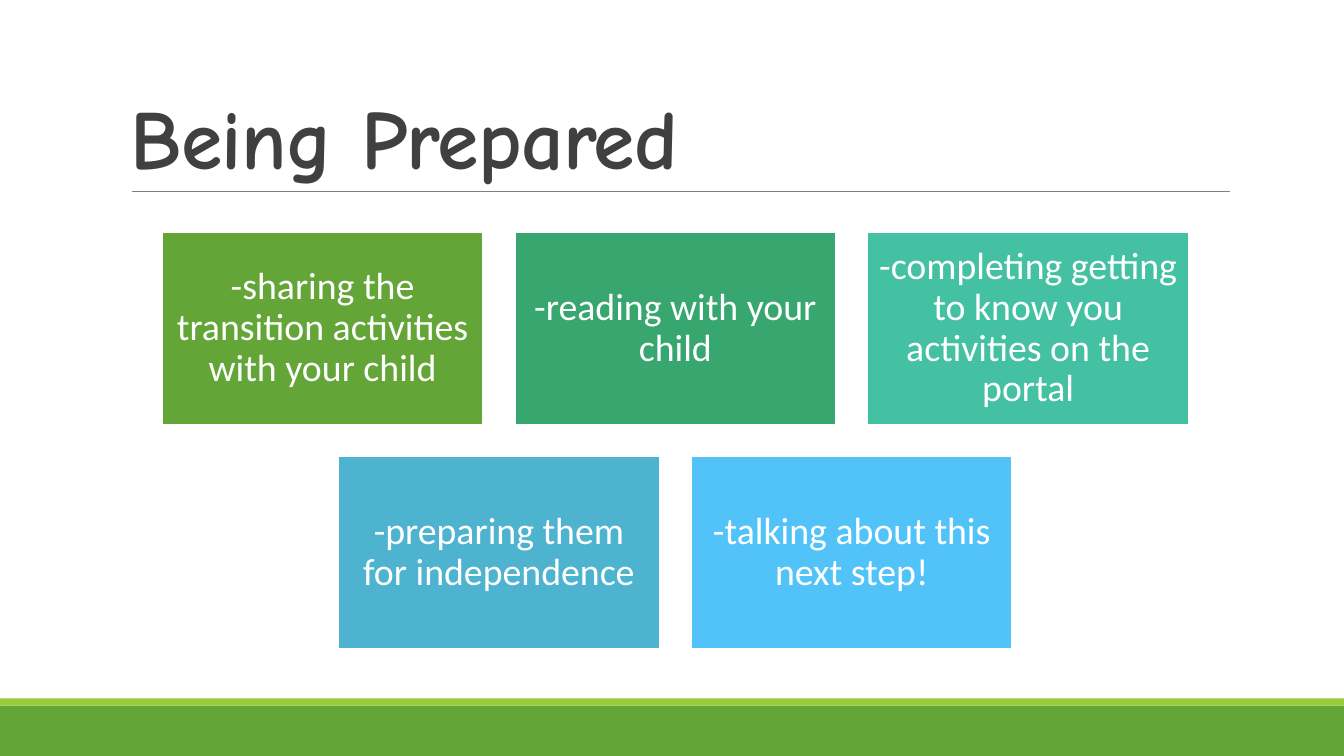
"""Build the "Being Prepared" slide: a title above two centred rows of coloured cards."""
from lxml.etree import SubElement
from pptx import Presentation
from pptx.dml.color import RGBColor
from pptx.enum.shapes import MSO_CONNECTOR, MSO_SHAPE
from pptx.enum.text import MSO_ANCHOR, PP_ALIGN
from pptx.oxml.ns import qn
from pptx.util import Cm, Pt

WHITE = RGBColor(0xFF, 0xFF, 0xFF)
DARK = RGBColor(0x40, 0x40, 0x40)
GREY = RGBColor(0x80, 0x80, 0x80)
GREEN = RGBColor(0x63, 0xA5, 0x37)
LIME = RGBColor(0x99, 0xCB, 0x38)
EMERALD = RGBColor(0x37, 0xA7, 0x6F)
TEAL = RGBColor(0x44, 0xC1, 0xA3)
BLUE = RGBColor(0x4E, 0xB3, 0xCF)
SKY = RGBColor(0x51, 0xC3, 0xF9)

TITLE = "Being Prepared"
ROWS = [
    [("-sharing the transition activities with your child", GREEN),
     ("-reading with your child", EMERALD),
     ("-completing getting to know you activities on the portal", TEAL)],
    [("-preparing them for independence", BLUE),
     ("-talking about this next step!", SKY)],
]
BANDS = [(17.78, 1.27, GREEN), (17.6, 0.18, LIME)]

SLIDE_W, SLIDE_H = 33.87, 19.05
CARD_W, CARD_H, GAP = 8.09, 4.85, 0.8
CARDS_CENTRE, CARDS_TOP = 17.02, 5.85


def write(sp, text, font="Calibri", size=27, color=WHITE, bold=False, spacing=0,
          align=PP_ALIGN.CENTER, anchor=MSO_ANCHOR.MIDDLE, leading=0.9,
          inset_x=0.28, inset_y=0.28):
    tf = sp.text_frame
    tf.word_wrap = True
    tf.vertical_anchor = anchor
    tf.margin_left = tf.margin_right = Cm(inset_x)
    tf.margin_top = tf.margin_bottom = Cm(inset_y)
    p = tf.paragraphs[0]
    p.alignment = align
    p.line_spacing = leading
    r = p.add_run()
    r.text = text
    r.font.name = font
    r.font.size = Pt(size)
    r.font.bold = bold
    r.font.color.rgb = color
    if spacing:
        r.font._element.set("spc", str(spacing))


def add_box(s, x, y, w, h, fill, line=None):
    sp = s.shapes.add_shape(MSO_SHAPE.RECTANGLE, Cm(x), Cm(y), Cm(w), Cm(h))
    sp.shadow.inherit = False
    sp.fill.solid()
    sp.fill.fore_color.rgb = fill
    if line is None:
        sp.line.fill.background()
    else:
        sp.line.color.rgb = line
        sp.line.width = Pt(1.25)
    return sp


def main():
    prs = Presentation()
    prs.slide_width, prs.slide_height = Cm(SLIDE_W), Cm(SLIDE_H)
    s = prs.slides.add_slide(prs.slide_layouts[6])

    for y, h, color in BANDS:
        add_box(s, 0, y, SLIDE_W, h, color)

    rule = s.shapes.add_connector(MSO_CONNECTOR.STRAIGHT, Cm(3.33), Cm(4.83), Cm(30.99), Cm(4.83))
    rule.line.color.rgb = GREY
    rule.line.width = Pt(0.5)
    SubElement(rule._element.spPr, qn("a:effectLst"))

    title = s.shapes.add_textbox(Cm(3.05), Cm(0.79), Cm(27.94), Cm(4.04))
    write(title, TITLE, font="Comic Neue", size=60, color=DARK, bold=True, spacing=-50,
          align=PP_ALIGN.LEFT, anchor=MSO_ANCHOR.BOTTOM, leading=0.85,
          inset_x=0.25, inset_y=0.13)

    for i, row in enumerate(ROWS):
        row_w = len(row) * (CARD_W + GAP) - GAP
        left = CARDS_CENTRE - row_w / 2
        top = CARDS_TOP + i * (CARD_H + GAP)
        for j, (text, color) in enumerate(row):
            card = add_box(s, left + j * (CARD_W + GAP), top, CARD_W, CARD_H, color, line=WHITE)
            write(card, text)

    prs.save("out.pptx")


if __name__ == "__main__":
    main()
